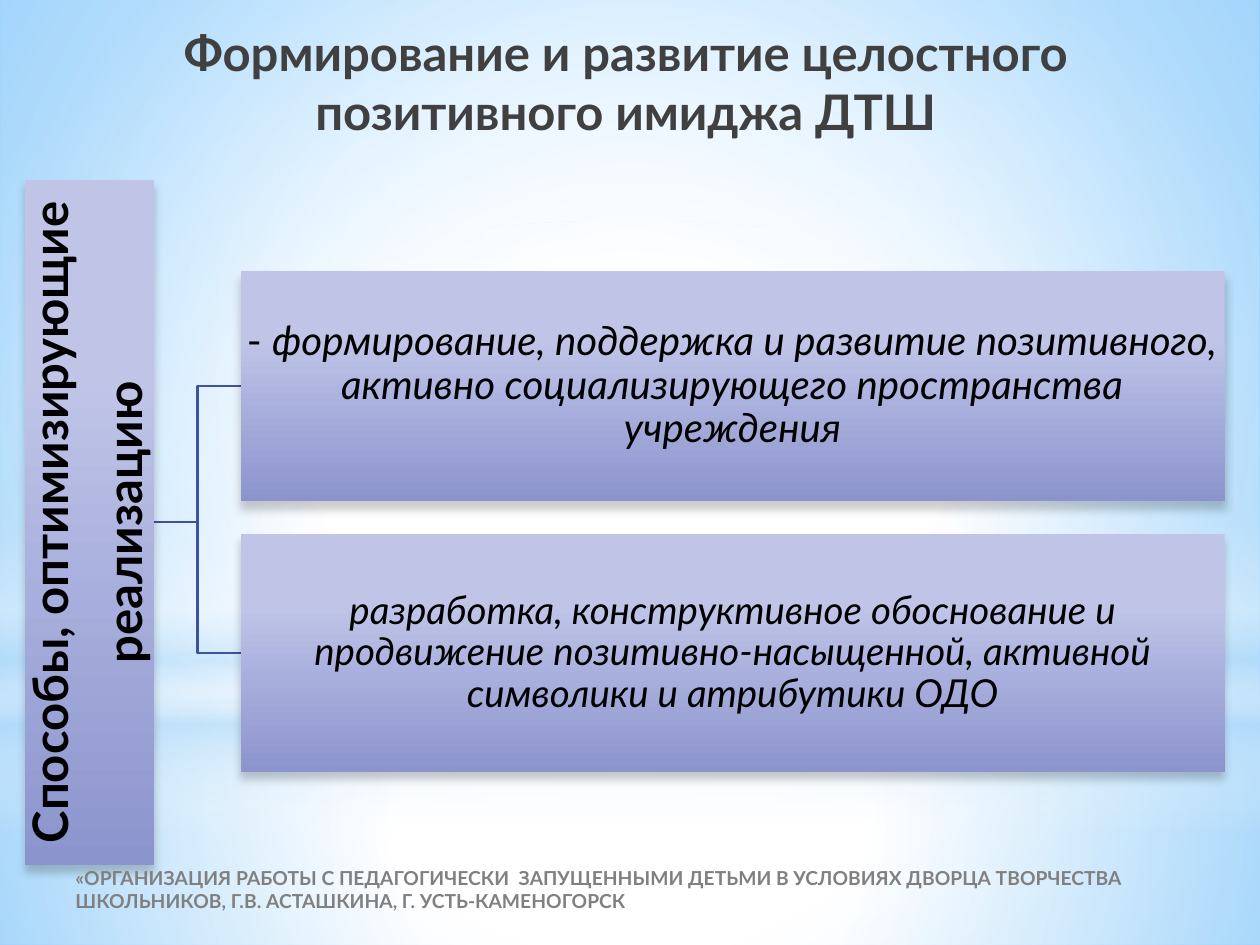
from dataclasses import dataclass
from typing import Any, Optional

from lxml.etree import SubElement
from pptx import Presentation
from pptx.dml.color import RGBColor as Rgb
from pptx.enum.shapes import MSO_SHAPE as Form
from pptx.enum.text import MSO_ANCHOR as Anchor, PP_ALIGN as Align
from pptx.oxml import parse_xml
from pptx.oxml.ns import nsdecls, qn
from pptx.util import Inches, Pt

COLORS = {
    "white": "FFFFFF", "sky": "63BCFF", "pale": "B4DCFA",
    "light": "C0C5E8", "dark": "8C94CE", "line": "3E52A0",
    "title": "404040", "text": "000000", "foot": "808080",
}
FONT = "Lato"


@dataclass(frozen=True)
class Grad:
    """Stops are (place, color, opacity); focus is the left, top, right, bottom of a round fill."""
    stops: tuple[tuple[int, str, int], ...]
    focus: Optional[tuple[int, int, int, int]] = None


@dataclass(frozen=True)
class Run:
    text: str
    bold: bool = False
    italic: bool = False


@dataclass(frozen=True)
class Glow:
    form: Form
    top: float
    height: float
    grad: Grad


@dataclass(frozen=True)
class Panel:
    left: float
    top: float
    width: float
    height: float
    size: int
    lines: tuple[tuple[Run, ...], ...]
    turn: int = 0


MID = (50, 50, 50, 50)
BACK = Grad(((0, "white", 100), (42, "white", 100), (100, "sky", 100)), (24, 44, 24, 12))
BOX = Grad(((28, "light", 100), (100, "dark", 100)))
GLOWS = (
    Glow(Form.RECTANGLE, 5.58, 1.92,
         Grad(((0, "white", 91), (37, "white", 76), (100, "pale", 79)), MID)),
    Glow(Form.RECTANGLE, 0, 5.58,
         Grad(((0, "white", 89), (48, "white", 62), (100, "pale", 79)), MID)),
    Glow(Form.RECTANGLE, 4.12, 2.5,
         Grad(((0, "white", 0), (29, "white", 30), (45, "pale", 40),
               (55, "white", 26), (65, "pale", 60), (100, "white", 0)))),
    Glow(Form.OVAL, 1.75, 5.58, Grad(((0, "white", 100), (56, "white", 0)), MID)),
)
ROOT = Panel(-2.01, 3.63, 5.44, 1.03, 28, (
    (Run("Способы, оптимизирующие", bold=True),),
    (Run("реализацию", bold=True),),
), turn=270)
WAYS = (
    Panel(1.91, 2.15, 7.81, 1.83, 23, ((
        Run("- "),
        Run("формирование, поддержка и развитие позитивного, активно "
            "социализирующего пространства учреждения", italic=True),
    ),)),
    Panel(1.91, 4.24, 7.81, 1.89, 22, ((
        Run("разработка, конструктивное обоснование и продвижение "
            "позитивно-насыщенной, активной символики и атрибутики ОДО", italic=True),
    ),)),
)


def grad_xml(grad: Grad) -> Any:
    stops = "".join(
        f'<a:gs pos="{pos * 1000}"><a:srgbClr val="{COLORS[name]}">'
        f'<a:alpha val="{alpha * 1000}"/></a:srgbClr></a:gs>'
        for pos, name, alpha in grad.stops)
    if grad.focus:
        sides = " ".join(f'{side}="{val * 1000}"' for side, val in zip("ltrb", grad.focus))
        kind = f'<a:path path="circle"><a:fillToRect {sides}/></a:path>'
    else:
        kind = '<a:lin ang="5400000" scaled="0"/>'
    return parse_xml(f'<a:gradFill {nsdecls("a")} rotWithShape="0">'
                     f'<a:gsLst>{stops}</a:gsLst>{kind}</a:gradFill>')


def paint(shape: Any, grad: Grad) -> None:
    shape.shadow.inherit = False
    shape.line.fill.background()
    shape.fill.solid()
    props = shape.element.spPr
    props.replace(props.find(qn("a:solidFill")), grad_xml(grad))


def shade(shape: Any) -> None:
    """Drop a soft shadow straight down."""
    effects = shape.element.spPr.find(qn("a:effectLst"))
    drop = SubElement(effects, qn("a:outerShdw"), blurRad=str(Pt(5)), dist=str(Pt(4)),
                      dir="5400000", rotWithShape="0")
    color = SubElement(drop, qn("a:srgbClr"), val=COLORS["text"])
    SubElement(color, qn("a:alpha"), val="20000")


def write(shape: Any, lines: tuple[tuple[Run, ...], ...], *, size: int, color: str = "text",
          align: Align = Align.CENTER, anchor: Anchor = Anchor.MIDDLE,
          pad: Optional[float] = None, space: float = 1.0, after: float = 0) -> None:
    frame = shape.text_frame
    frame.word_wrap = True
    frame.vertical_anchor = anchor
    if pad is not None:
        frame.margin_left = frame.margin_right = Inches(pad)
        frame.margin_top = frame.margin_bottom = Inches(pad)
    for i, runs in enumerate(lines):
        para = frame.add_paragraph() if i else frame.paragraphs[0]
        para.alignment = align
        para.line_spacing = space
        para.space_before = Pt(0)
        para.space_after = Pt(after)
        for item in runs:
            run = para.add_run()
            run.text = item.text
            font = run.font
            font.name, font.size = FONT, Pt(size)
            font.bold, font.italic = item.bold, item.italic
            font.color.rgb = Rgb.from_string(COLORS[color])


def add_glow(shapes: Any, glow: Glow) -> None:
    paint(shapes.add_shape(glow.form, 0, Inches(glow.top), Inches(10), Inches(glow.height)),
          glow.grad)


def add_panel(shapes: Any, panel: Panel) -> None:
    box = shapes.add_shape(Form.RECTANGLE, Inches(panel.left), Inches(panel.top),
                           Inches(panel.width), Inches(panel.height))
    box.rotation = panel.turn
    paint(box, BOX)
    shade(box)
    write(box, panel.lines, size=panel.size, pad=0.02, space=0.9, after=12)


def add_branch(shapes: Any, root: Panel, way: Panel) -> None:
    """Draw a stepped line from the upright root to the left side of a way."""
    start = root.left + (root.width + root.height) / 2
    level = root.top + root.height / 2
    end = way.top + way.height / 2
    bend = (start + way.left) / 2
    pen = shapes.build_freeform(Inches(start), Inches(level))
    pen.add_line_segments([(Inches(x), Inches(y)) for x, y in
                           ((bend, level), (bend, end), (way.left, end))], close=False)
    branch = pen.convert_to_shape()
    branch.shadow.inherit = False
    branch.fill.background()
    branch.line.color.rgb = Rgb.from_string(COLORS["line"])
    branch.line.width = Pt(1.25)


def main() -> None:
    prs = Presentation()
    prs.slide_width, prs.slide_height = Inches(10), Inches(7.5)
    slide = prs.slides.add_slide(prs.slide_layouts[5])
    shapes = slide.shapes

    slide.background.fill.solid()
    solid = slide.element.find(f".//{qn('p:bgPr')}/{qn('a:solidFill')}")
    solid.getparent().replace(solid, grad_xml(BACK))
    for glow in GLOWS:
        add_glow(shapes, glow)

    title = shapes.title
    title.left, title.top = Inches(0.28), Inches(0.13)
    title.width, title.height = Inches(9.37), Inches(1.25)
    write(title, ((Run("Формирование и развитие целостного позитивного имиджа ДТШ", bold=True),),),
          size=28, color="title", anchor=Anchor.TOP)
    shapes.element.append(title.element)  # in front of the glows

    for way in reversed(WAYS):
        add_branch(shapes, ROOT, way)
    for panel in (ROOT, *WAYS):
        add_panel(shapes, panel)

    foot = shapes.add_textbox(Inches(0.5), Inches(6.75), Inches(9.22), Inches(0.62))
    write(foot, ((Run("«ОРГАНИЗАЦИЯ РАБОТЫ С ПЕДАГОГИЧЕСКИ  ЗАПУЩЕННЫМИ ДЕТЬМИ В УСЛОВИЯХ ДВОРЦА "
                      "ТВОРЧЕСТВА ШКОЛЬНИКОВ, Г.В. АСТАШКИНА, Г. УСТЬ-КАМЕНОГОРСК", bold=True),),),
          size=11, color="foot", align=Align.LEFT)
    prs.save("out.pptx")


if __name__ == "__main__":
    main()
